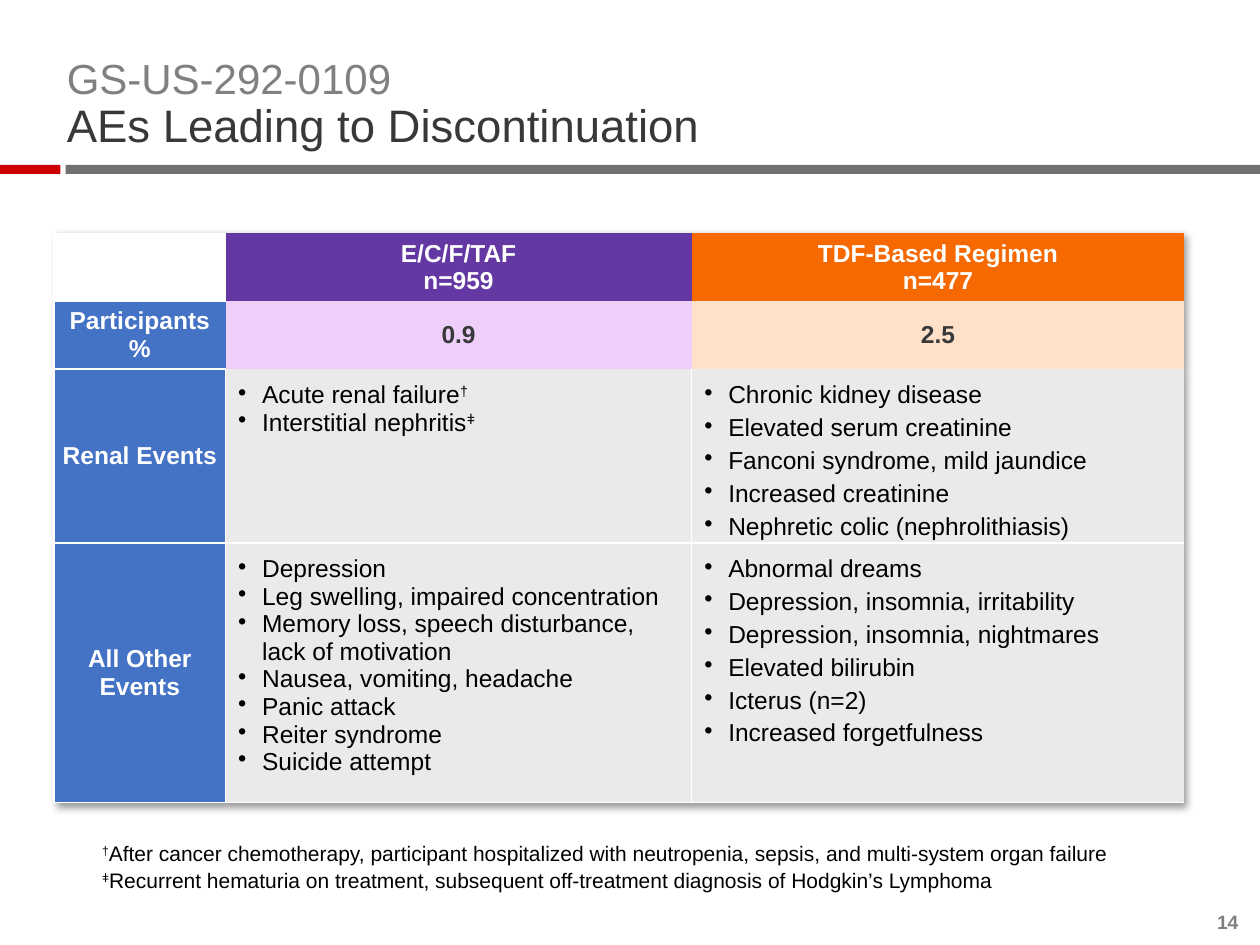
from dataclasses import dataclass
from itertools import groupby

from lxml.etree import SubElement
from pptx import Presentation
from pptx.dml.color import RGBColor
from pptx.enum.shapes import MSO_SHAPE
from pptx.enum.text import MSO_ANCHOR, MSO_AUTO_SIZE, PP_ALIGN
from pptx.oxml import parse_xml
from pptx.oxml.ns import nsdecls, qn
from pptx.util import Inches, Pt


@dataclass(frozen=True)
class Theme:
    """Colours, type sizes and font of the deck."""
    font: str = "Arial"
    white: str = "FFFFFF"
    black: str = "000000"
    dark: str = "383838"
    study_grey: str = "808080"
    number_grey: str = "7F7F7F"
    rule_grey: str = "717171"
    rule_red: str = "CC0000"
    label_blue: str = "4472C4"
    list_grey: str = "EAEAEA"
    heads: tuple = ("6338A2", "F66900")
    tints: tuple = ("EDCFFA", "FFE1CA")
    study_size: int = 24
    title_size: int = 26
    table_size: int = 14
    note_size: int = 12
    number_size: int = 11


THEME = Theme()
MARKS = "†ǂ"
PLAIN_TABLE_STYLE = "{2D5ABB26-0587-4C30-8999-92F81FD0307C}"
COLUMN_WIDTHS = (1.36, 3.7, 3.91)
ROW_HEIGHTS = (0.54, 0.54, 1.38, 2.06)
HEADS = ("E/C/F/TAF\nn=959", "TDF-Based Regimen\nn=477")
RATES = ("0.9", "2.5")
EVENTS = {
    "Renal Events": (
        ("Acute renal failure†", "Interstitial nephritisǂ"),
        ("Chronic kidney disease", "Elevated serum creatinine",
         "Fanconi syndrome, mild jaundice", "Increased creatinine",
         "Nephretic colic (nephrolithiasis)"),
    ),
    "All Other Events": (
        ("Depression", "Leg swelling, impaired concentration",
         "Memory loss, speech disturbance, \nlack of motivation",
         "Nausea, vomiting, headache", "Panic attack", "Reiter syndrome",
         "Suicide attempt"),
        ("Abnormal dreams", "Depression, insomnia, irritability",
         "Depression, insomnia, nightmares", "Elevated bilirubin",
         "Icterus (n=2)", "Increased forgetfulness"),
    ),
}
NOTES = (
    "†After cancer chemotherapy, participant hospitalized with neutropenia, "
    "sepsis, and multi-system organ failure",
    "ǂRecurrent hematuria on treatment, subsequent off-treatment diagnosis "
    "of Hodgkin’s Lymphoma",
)


def apply(target, values):
    """Set each named attribute of the target."""
    for name, value in values.items():
        setattr(target, name, value)


def place(shape, box):
    """Move a shape to a box given in inches."""
    names = ("left", "top", "width", "height")
    apply(shape, dict(zip(names, map(Inches, box))))


def set_frame(frame, insets=(0, 0, 0, 0), anchor=MSO_ANCHOR.TOP):
    """Format a text frame."""
    names = ("margin_left", "margin_top", "margin_right", "margin_bottom")
    apply(frame, dict(zip(names, map(Inches, insets))))
    apply(frame, {"word_wrap": True, "auto_size": MSO_AUTO_SIZE.NONE,
                  "vertical_anchor": anchor})


def add_span(para, text, size, color, bold=False):
    """Add text to a paragraph, raising the footnote marks."""
    for raised, letters in groupby(text, lambda letter: letter in MARKS):
        span = para.add_run()
        span.text = "".join(letters)
        apply(span.font, {"name": THEME.font, "size": Pt(size), "bold": bold})
        span.font.color.rgb = RGBColor.from_string(color)
        if raised:
            span.font._element.set("baseline", "30000")


def write(para, text, size, color, bold=False, **layout):
    """Fill a paragraph, with a line break at each newline."""
    apply(para, {"space_before": Pt(0), **layout})
    for index, line in enumerate(text.split("\n")):
        if index:
            para.add_line_break()
        add_span(para, line, size, color, bold)


def paragraphs(frame, texts):
    """Yield each text with a paragraph of the frame."""
    for index, text in enumerate(texts):
        yield (frame.add_paragraph() if index else frame.paragraphs[0]), text


def set_bullet(para, char=None, left=0.0, hanging=0.0):
    """Give a paragraph its indent and its bullet, if any."""
    properties = para._p.get_or_add_pPr()
    properties.set("marL", str(Inches(left)))
    properties.set("indent", str(-Inches(hanging)))
    if char:
        SubElement(properties, qn("a:buChar"), char=char)
    else:
        SubElement(properties, qn("a:buNone"))


def set_borders(cell, sides):
    """Draw white lines on the named sides of a cell."""
    properties = cell._tc.get_or_add_tcPr()
    for index, side in enumerate(sides):
        properties.insert(index, parse_xml(
            f'<a:ln{side} {nsdecls("a")} w="12700"><a:solidFill>'
            f'<a:srgbClr val="{THEME.white}"/></a:solidFill></a:ln{side}>'))


def fill_cell(cell, color, sides=""):
    """Colour a cell and draw its borders."""
    cell.fill.solid()
    cell.fill.fore_color.rgb = RGBColor.from_string(color)
    set_borders(cell, sides)


def set_cell(cell, insets, anchor):
    """Format the margins and anchor of a cell."""
    names = ("margin_left", "margin_top", "margin_right", "margin_bottom")
    apply(cell, dict(zip(names, map(Inches, insets))))
    cell.vertical_anchor = anchor


def centred_cell(cell, text, fill, color, sides="", inset=0.05, anchor=MSO_ANCHOR.MIDDLE):
    """Fill a cell with bold centred text."""
    fill_cell(cell, fill, sides)
    set_cell(cell, (inset, 0.05, inset, 0.05), anchor)
    write(cell.text_frame.paragraphs[0], text, THEME.table_size, color, True,
          alignment=PP_ALIGN.CENTER)


def list_cell(cell, items, gap):
    """Fill a cell with a bulleted list."""
    fill_cell(cell, THEME.list_grey, "LB")
    set_cell(cell, (0.1, 0.1, 0.1, 0.02), MSO_ANCHOR.TOP)
    for para, item in paragraphs(cell.text_frame, items):
        write(para, item, THEME.table_size, THEME.black, space_before=Pt(gap))
        set_bullet(para, "•", 0.19, 0.19)


def add_rules(page, top, height):
    """Draw the red and grey bars under the title."""
    for left, width, color in ((0, 0.48, THEME.rule_red), (0.52, 9.48, THEME.rule_grey)):
        bar = page.shapes.add_shape(
            MSO_SHAPE.RECTANGLE, *map(Inches, (left, top, width, height)))
        bar.shadow.inherit = False
        bar.fill.solid()
        bar.fill.fore_color.rgb = RGBColor.from_string(color)
        bar.line.fill.background()


def add_title(page, box):
    """Write the study number and the title."""
    title = page.shapes.title
    place(title, box)
    set_frame(title.text_frame, anchor=MSO_ANCHOR.BOTTOM)
    para = title.text_frame.paragraphs[0]
    write(para, "GS-US-292-0109\n", THEME.study_size, THEME.study_grey,
          alignment=PP_ALIGN.LEFT, line_spacing=0.9)
    add_span(para, "AEs Leading to Discontinuation", THEME.title_size, THEME.dark)


def add_events_table(page, box):
    """Build the table of events by regimen."""
    frame = page.shapes.add_table(
        len(ROW_HEIGHTS), len(COLUMN_WIDTHS), *map(Inches, box))
    table = frame.table
    apply(table, {"first_row": False, "horz_banding": False})
    properties = table._tbl.tblPr
    properties.find(qn("a:tableStyleId")).text = PLAIN_TABLE_STYLE
    properties.insert(0, parse_xml(
        f'<a:effectLst {nsdecls("a")}><a:outerShdw blurRad="50800" dist="38100" '
        'dir="2700000" algn="tl" rotWithShape="0"><a:prstClr val="black">'
        '<a:alpha val="40000"/></a:prstClr></a:outerShdw></a:effectLst>'))
    for column, width in zip(table.columns, COLUMN_WIDTHS):
        column.width = Inches(width)
    for row, height in zip(table.rows, ROW_HEIGHTS):
        row.height = Inches(height)
    fill_cell(table.cell(0, 0), THEME.white, "LB")
    for row, label in enumerate(("Participants %", *EVENTS), 1):
        centred_cell(table.cell(row, 0), label, THEME.label_blue, THEME.white, "LTB")
    for column in (1, 2):
        centred_cell(table.cell(0, column), HEADS[column - 1], THEME.heads[column - 1],
                     THEME.white, inset=0.1, anchor=MSO_ANCHOR.BOTTOM)
        centred_cell(table.cell(1, column), RATES[column - 1],
                     THEME.tints[column - 1], THEME.dark)
        for row, lists in enumerate(EVENTS.values(), 2):
            list_cell(table.cell(row, column), lists[column - 1], 3 * (column - 1))


def add_notes(page, box):
    """Write the footnotes in the body placeholder."""
    body = page.placeholders[1]
    place(body, box)
    set_frame(body.text_frame)
    for para, note in paragraphs(body.text_frame, NOTES):
        write(para, note, THEME.note_size, THEME.black, space_before=Pt(1))
        set_bullet(para, left=0.13)


def add_page_number(page, box):
    """Write the page number."""
    frame = page.shapes.add_textbox(*map(Inches, box)).text_frame
    set_frame(frame, anchor=MSO_ANCHOR.BOTTOM)
    write(frame.paragraphs[0], "14", THEME.number_size, THEME.number_grey, True,
          alignment=PP_ALIGN.RIGHT)


def main():
    """Build and save the deck."""
    deck = Presentation()
    apply(deck, {"slide_width": Inches(10), "slide_height": Inches(7.5)})
    page = deck.slides.add_slide(deck.slide_layouts[1])
    add_rules(page, 1.31, 0.07)
    add_title(page, (0.53, 0.47, 9, 0.74))
    add_notes(page, (0.68, 6.67, 8.9, 0.5))
    add_events_table(page, (0.43, 1.85, sum(COLUMN_WIDTHS), sum(ROW_HEIGHTS)))
    add_page_number(page, (9.56, 7.23, 0.27, 0.18))
    deck.save("out.pptx")


if __name__ == "__main__":
    main()
